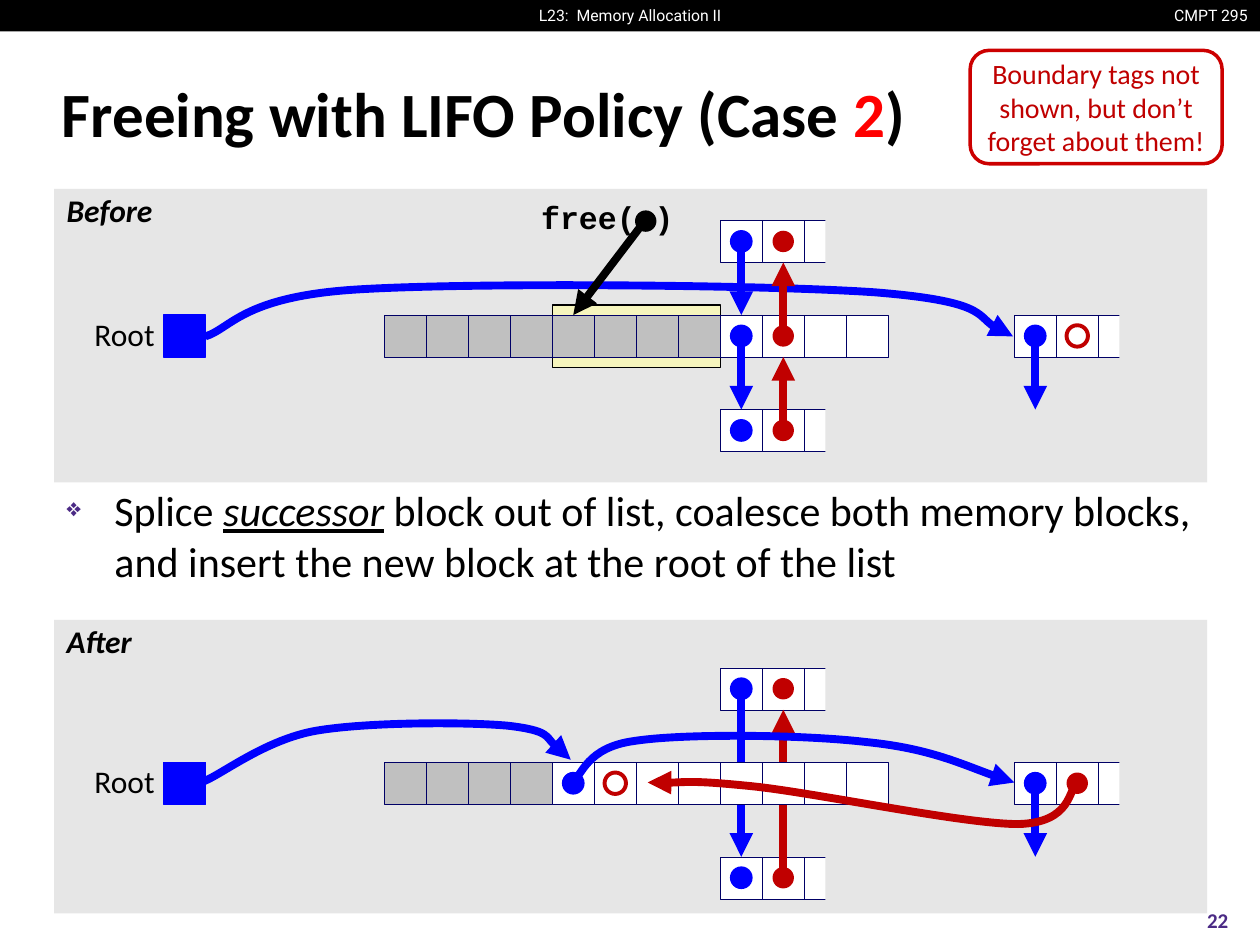
from lxml import etree
from pptx import Presentation
from pptx.dml.color import RGBColor
from pptx.enum import shapes, text
from pptx.oxml import ns
from pptx.util import Inches, Pt

BLACK = RGBColor(0x00, 0x00, 0x00)
WHITE = RGBColor(0xFF, 0xFF, 0xFF)
PANEL = RGBColor(0xE6, 0xE6, 0xE6)
GRAY = RGBColor(0xC0, 0xC0, 0xC0)
YELLOW = RGBColor(0xF6, 0xF5, 0xBD)
BLUE = RGBColor(0x00, 0x00, 0xFF)
NAVY = RGBColor(0x00, 0x00, 0x66)
RED = RGBColor(0xC0, 0x00, 0x00)
BORDER_RED = RGBColor(0xCC, 0x00, 0x00)
BRIGHT_RED = RGBColor(0xFF, 0x00, 0x00)
PURPLE = RGBColor(0x4B, 0x2A, 0x85)

CELL = 1 / 3
HEAP_LEFT = 3.05
DOT = 0.17
TOP, LEFT, BOTTOM = 0, 1, 2
LIST_COLUMN, FIRST_COLUMN = 8, 15
RECT = shapes.MSO_SHAPE.RECTANGLE
ROUND = shapes.MSO_SHAPE.ROUNDED_RECTANGLE
OVAL = shapes.MSO_SHAPE.OVAL
ALIGN = text.PP_ALIGN
MIDDLE = text.MSO_ANCHOR.MIDDLE


def column_left(column):
    return HEAP_LEFT + column * CELL


def column_center(column):
    return column_left(column + 0.5)


def add_block(page, kind, left, top, width, height, fill=None, line=None, weight=0.75):
    block = page.shapes.add_shape(kind, Inches(left), Inches(top), Inches(width), Inches(height))
    block.shadow.inherit = False
    if fill is None:
        block.fill.background()
    else:
        block.fill.solid()
        block.fill.fore_color.rgb = fill
    if line is None:
        block.line.fill.background()
    else:
        block.line.color.rgb = line
        block.line.width = Pt(weight)
    return block


def set_insets(frame, horizontal, vertical):
    frame.margin_left = frame.margin_right = Inches(horizontal)
    frame.margin_top = frame.margin_bottom = Inches(vertical)


def style_font(font, size, color, name="Calibri", bold=False, italic=False):
    font.name, font.size, font.bold, font.italic = name, Pt(size), bold, italic
    font.color.rgb = color


def add_label(page, wording, left, top, width, height, size, color=BLACK, align=ALIGN.LEFT,
              anchor=text.MSO_ANCHOR.TOP, insets=(0.1, 0.05), spacing=None, **style):
    box = page.shapes.add_textbox(Inches(left), Inches(top), Inches(width), Inches(height))
    frame = box.text_frame
    frame.word_wrap = False
    frame.vertical_anchor = anchor
    set_insets(frame, *insets)
    para = frame.paragraphs[0]
    para.text = wording
    para.alignment = align
    para.line_spacing = spacing
    style_font(para.font, size, color, **style)


def add_arrowhead(line, color):
    line.color.rgb = color
    line.width = Pt(4.5)
    etree.SubElement(line._get_or_add_ln(), ns.qn("a:tailEnd"), type="triangle")


def add_arrow(page, start, end, color, target=None, side=TOP):
    arrow = page.shapes.add_connector(shapes.MSO_CONNECTOR.STRAIGHT, *map(Inches, start + end))
    add_arrowhead(arrow.line, color)
    etree.SubElement(arrow._element.spPr, ns.qn("a:effectLst"))
    if target is not None:
        arrow.end_connect(target, side)


def add_curve(page, points, color):
    start, *rest = [(Inches(x), Inches(y)) for x, y in points]
    builder = page.shapes.build_freeform(*start)
    builder.add_line_segments(rest, close=False)
    curve = builder.convert_to_shape()
    curve.shadow.inherit = False
    curve.fill.background()
    add_arrowhead(curve.line, color)
    segments = list(curve._element.iter(ns.qn("a:lnTo")))
    for first, second, third in zip(*[iter(segments)] * 3):
        first.tag = ns.qn("a:cubicBezTo")
        for other in (second, third):
            first.append(other[0])
            other.getparent().remove(other)


def add_cells(page, column, top, fills):
    return [add_block(page, RECT, column_left(column + i), top, CELL, CELL, fill, NAVY, 0.25)
            for i, fill in enumerate(fills)]


def add_dot(page, column, row_top, color, hollow=False):
    offset = (CELL - DOT) / 2
    place = column_left(column) + offset, row_top + offset, DOT, DOT
    if hollow:
        add_block(page, OVAL, *place, line=color, weight=2.25)
    else:
        add_block(page, OVAL, *place, fill=color, line=BLUE if color == BLUE else None)


def add_cut_block(page, column, top, hollow=False):
    cells = add_cells(page, column, top, [WHITE] * 3)
    add_block(page, RECT, column_left(column + 2.5), top - 0.08, CELL, 0.5, PANEL)
    add_dot(page, column, top, BLUE)
    add_dot(page, column + 1, top, RED, hollow)
    return cells


def add_panel(page, caption, top):
    add_block(page, RECT, 0.43, top, 9.15, 2.33, PANEL)
    add_label(page, caption, 0.43, top, 1, 0.4, 18, spacing=0.9, bold=True, italic=True)


def add_root(page, top):
    add_block(page, RECT, 1.3, top, CELL, CELL, BLUE, BLUE)
    add_label(page, "Root", 0.7, top, 0.6, CELL, 18, anchor=MIDDLE, insets=(0.05, 0), spacing=0.9)


def add_first_block(page, top, hollow=False):
    add_cut_block(page, FIRST_COLUMN, top, hollow)
    x = column_center(FIRST_COLUMN)
    add_arrow(page, (x, top + CELL / 2), (x, top + 0.75), BLUE)


def add_link(page, column, start_top, target, side, color):
    x = column_center(column)
    y = start_top + CELL / 2
    add_arrow(page, (x, y), (x, y), color, target, side)


def draw_before(page):
    upper_top, heap_top, lower_top = 1.75, 2.5, 3.25
    add_panel(page, "Before", 1.5)
    add_root(page, heap_top)
    add_first_block(page, heap_top, hollow=True)
    add_curve(page, [(1.63, 2.67), (1.83, 2.61), (1.92, 2.36), (2.8, 2.3), (3.69, 2.24),
                     (6.06, 2.26), (6.94, 2.32), (7.81, 2.39), (7.81, 2.6), (8.04, 2.67)], BLUE)
    add_block(page, RECT, column_left(4), heap_top - 0.08, 4 * CELL, 0.5, YELLOW, BLACK)
    heap = add_cells(page, 0, heap_top, [GRAY] * 8 + [WHITE] * 4)
    add_dot(page, LIST_COLUMN, heap_top, BLUE)
    add_dot(page, LIST_COLUMN + 1, heap_top, RED)
    upper = add_cut_block(page, LIST_COLUMN, upper_top)
    lower = add_cut_block(page, LIST_COLUMN, lower_top)
    add_link(page, LIST_COLUMN, upper_top, heap[LIST_COLUMN], TOP, BLUE)
    add_link(page, LIST_COLUMN, heap_top, lower[0], TOP, BLUE)
    add_link(page, LIST_COLUMN + 1, lower_top, heap[LIST_COLUMN + 1], BOTTOM, RED)
    add_link(page, LIST_COLUMN + 1, heap_top, upper[1], BOTTOM, RED)
    add_label(page, "free( )", 4.24, 1.56, 1.16, 0.38, 18, align=ALIGN.CENTER,
              insets=(0.05, 0.05), spacing=0.9, name="Courier New", bold=True)
    add_block(page, OVAL, 5.04, 1.67, DOT, DOT, BLACK)
    add_arrow(page, (5.12, 1.75), (4.54, 2.5), BLACK, heap[4])


def draw_after(page):
    upper_top, heap_top, lower_top = 5.3, 6.05, 6.8
    add_panel(page, "After", 4.92)
    add_root(page, heap_top)
    lower = add_cut_block(page, LIST_COLUMN, lower_top)
    upper = add_cut_block(page, LIST_COLUMN, upper_top)
    add_link(page, LIST_COLUMN + 1, lower_top, upper[1], BOTTOM, RED)
    add_link(page, LIST_COLUMN, upper_top, lower[0], TOP, BLUE)
    add_cells(page, 0, heap_top, [GRAY] * 4 + [WHITE] * 8)
    add_dot(page, 4, heap_top, BLUE)
    add_dot(page, 5, heap_top, RED, hollow=True)
    add_curve(page, [(4.54, 6.21), (4.62, 6.16), (4.65, 5.93), (5.04, 5.88), (5.43, 5.82),
                     (6.38, 5.83), (6.88, 5.89), (7.38, 5.94), (7.81, 6.14), (8.05, 6.21)], BLUE)
    add_curve(page, [(1.62, 6.2), (1.77, 6.14), (2.11, 5.87), (2.51, 5.8), (2.92, 5.73),
                     (3.7, 5.73), (4.03, 5.76), (4.37, 5.8), (4.43, 5.97), (4.53, 6.03)], BLUE)
    add_first_block(page, heap_top)
    add_curve(page, [(8.55, 6.21), (8.48, 6.26), (8.51, 6.53), (8.08, 6.54), (7.65, 6.54),
                     (6.46, 6.29), (5.97, 6.24), (5.48, 6.19), (5.31, 6.22), (5.14, 6.21)], RED)


def draw_header(page):
    add_block(page, RECT, 0, 0, 10, 0.25, BLACK)
    add_label(page, "CMPT 295", 9.19, 0, 0.81, 0.25, 9, WHITE, ALIGN.RIGHT, name="Roboto")
    add_label(page, "L23:  Memory Allocation II", 4.17, 0, 1.66, 0.25, 9, WHITE, ALIGN.CENTER,
              name="Roboto")


def fill_title(title):
    title.left, title.top, title.width, title.height = map(Inches, (0.39, 0.48, 9.19, 0.83))
    title.text_frame.vertical_anchor = MIDDLE
    para = title.text_frame.paragraphs[0]
    para.alignment = ALIGN.LEFT
    style_font(para.font, 36, BLACK, bold=True)
    for wording, color in (("Freeing with LIFO Policy (Case ", BLACK), ("2", BRIGHT_RED), (")", BLACK)):
        span = para.add_run()
        span.text = wording
        span.font.color.rgb = color


def add_summary(page):
    box = page.shapes.add_textbox(Inches(0.43), Inches(3.8), Inches(9.15), Inches(1.2))
    box.text_frame.word_wrap = True
    para = box.text_frame.paragraphs[0]
    para.space_before = Pt(4.8)
    properties = para._p.get_or_add_pPr()
    properties.set("marL", str(Inches(0.38)))
    properties.set("indent", str(-Inches(0.38)))
    color = etree.SubElement(properties, ns.qn("a:buClr"))
    etree.SubElement(color, ns.qn("a:srgbClr"), val=str(PURPLE))
    etree.SubElement(properties, ns.qn("a:buSzPct"), val="60000")
    etree.SubElement(properties, ns.qn("a:buChar"), char="❖")
    style_font(para.font, 24, BLACK)
    for wording, stressed in (
            ("Splice ", False), ("successor", True),
            (" block out of list, coalesce both memory blocks, "
             "and insert the new block at the root of the list", False)):
        span = para.add_run()
        span.text = wording
        span.font.italic = span.font.underline = stressed


def add_reminder(page):
    note = add_block(page, ROUND, 7.7, 0.4, 2, 0.9, line=BORDER_RED, weight=2)
    frame = note.text_frame
    frame.word_wrap = True
    frame.vertical_anchor = MIDDLE
    set_insets(frame, 0, 0.05)
    para = frame.paragraphs[0]
    para.text = "Boundary tags not shown, but don’t forget about them!"
    para.alignment = ALIGN.CENTER
    style_font(para.font, 16, RED)


def main():
    deck = Presentation()
    deck.slide_width, deck.slide_height = Inches(10), Inches(7.5)
    page = deck.slides.add_slide(deck.slide_layouts[5])
    draw_header(page)
    fill_title(page.shapes.title)
    add_summary(page)
    add_label(page, "22", 9.33, 7.1, 0.67, 0.4, 12, PURPLE, ALIGN.CENTER, MIDDLE, bold=True)
    add_reminder(page)
    draw_before(page)
    draw_after(page)
    deck.save("out.pptx")


if __name__ == "__main__":
    main()
